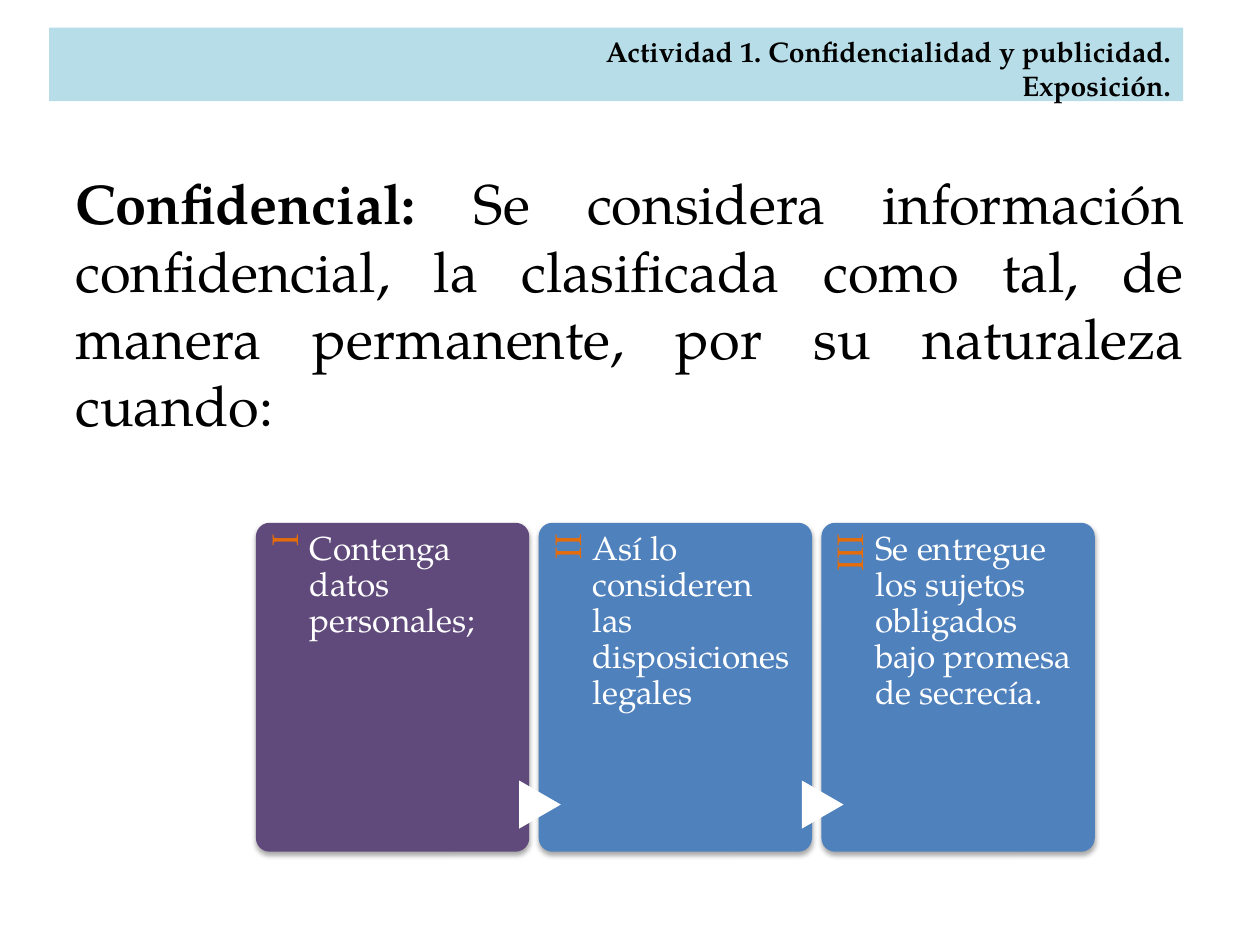
from dataclasses import dataclass

from lxml import etree
from pptx import Presentation
from pptx.dml.color import RGBColor
from pptx.enum.shapes import MSO_SHAPE
from pptx.enum.text import MSO_ANCHOR, PP_ALIGN
from pptx.oxml.ns import qn
from pptx.util import Cm, Pt

RECT = MSO_SHAPE.RECTANGLE
ROUND = MSO_SHAPE.ROUNDED_RECTANGLE
EXTRACT = MSO_SHAPE.FLOWCHART_EXTRACT
TOP = MSO_ANCHOR.TOP
LEFT, RIGHT, JUSTIFY = PP_ALIGN.LEFT, PP_ALIGN.RIGHT, PP_ALIGN.JUSTIFY

FONT = "TeX Gyre Pagella"
COLORS = {
    "black": "000000",
    "white": "FFFFFF",
    "band": "B7DEE8",
    "purple": "604A7B",
    "blue": "4F81BD",
    "orange": "E46C0A",
}
CARD_X, CARD_Y, CARD_W, CARD_H = 5.16, 10.54, 5.51, 6.63
PITCH = 5.7


@dataclass
class Run:
    text: str
    size: float
    color: str = "black"
    bold: bool = False


@dataclass
class Card:
    mark: str
    text: str
    fill: str


CARDS = [
    Card("I", "Contenga datos personales;", "purple"),
    Card("II", "Así lo consideren las disposiciones legales", "blue"),
    Card("III", "Se entregue los sujetos obligados bajo promesa de secrecía.", "blue"),
]


def rgb(name: str) -> RGBColor:
    return RGBColor.from_string(COLORS[name])


def add_block(slide, kind, x: float, y: float, w: float, h: float, fill: str):
    shape = slide.shapes.add_shape(kind, Cm(x), Cm(y), Cm(w), Cm(h))
    shape.shadow.inherit = False
    shape.fill.solid()
    shape.fill.fore_color.rgb = rgb(fill)
    shape.line.fill.background()
    return shape


def add_box(slide, x: float, y: float, w: float, h: float, pad=None):
    """Add a text box; pad holds the left, top, right and bottom insets in cm."""
    box = slide.shapes.add_textbox(Cm(x), Cm(y), Cm(w), Cm(h))
    frame = box.text_frame
    frame.word_wrap = True
    if pad:
        (frame.margin_left, frame.margin_top,
         frame.margin_right, frame.margin_bottom) = map(Cm, pad)
    return box


def write(frame, lines: list[list[Run]], align, spacing: float = 1.0) -> None:
    frame.vertical_anchor = TOP
    for i, line in enumerate(lines):
        para = frame.paragraphs[0] if i == 0 else frame.add_paragraph()
        para.alignment = align
        para.line_spacing = spacing
        for item in line:
            run = para.add_run()
            run.text = item.text
            run.font.name = FONT
            run.font.size = Pt(item.size)
            run.font.bold = item.bold
            run.font.color.rgb = rgb(item.color)


def add_shadow(shape) -> None:
    effects = shape.element.spPr.find(qn("a:effectLst"))
    outer = etree.SubElement(
        effects, qn("a:outerShdw"), blurRad=str(Pt(3.1)), dist=str(Pt(1.8)),
        dir="5400000", rotWithShape="0")
    tint = etree.SubElement(outer, qn("a:srgbClr"), val=COLORS["black"])
    etree.SubElement(tint, qn("a:alpha"), val="35000")


def add_card(slide, card: Card, x: float, arrow: bool) -> None:
    panel = add_block(slide, ROUND, x, CARD_Y, CARD_W, CARD_H, card.fill)
    panel.adjustments[0] = 0.05
    add_shadow(panel)

    mark = add_box(slide, x - 2.16, 12.7, 5.44, 1.09, (0, 0.2, 0.25, 0))
    mark.rotation = 270
    write(mark.text_frame, [[Run(card.mark, 21, "orange")]], RIGHT, 0.9)

    if arrow:
        tip = add_block(slide, EXTRACT, x - 0.46, 15.8, 0.97, 0.84, "white")
        tip.rotation = 90

    body = add_box(slide, x + 1.09, CARD_Y, 4.13, CARD_H, (0, 0.18, 0, 0))
    write(body.text_frame, [[Run(card.text, 19, "white")]], LEFT, 0.9)


def main() -> None:
    deck = Presentation()
    deck.slide_width, deck.slide_height = Cm(25.4), Cm(19.05)
    slide = deck.slides.add_slide(deck.slide_layouts[6])

    intro = add_box(slide, 1.27, 3.28, 22.86, 12.57)
    write(intro.text_frame, [[
        Run("Confidencial: ", 32, bold=True),
        Run("Se considera información confidencial, la clasificada como tal, "
            "de manera permanente, por su naturaleza cuando:", 32),
    ]], JUSTIFY)

    for i, card in enumerate(CARDS):
        add_card(slide, card, CARD_X + i * PITCH, arrow=i > 0)

    band = add_block(slide, RECT, 0.99, 0.56, 22.86, 1.48, "band")
    titles = ("Actividad 1. Confidencialidad y publicidad.", "Exposición.")
    write(band.text_frame, [[Run(t, 16.2, bold=True)] for t in titles], RIGHT)

    deck.save("out.pptx")


if __name__ == "__main__":
    main()
